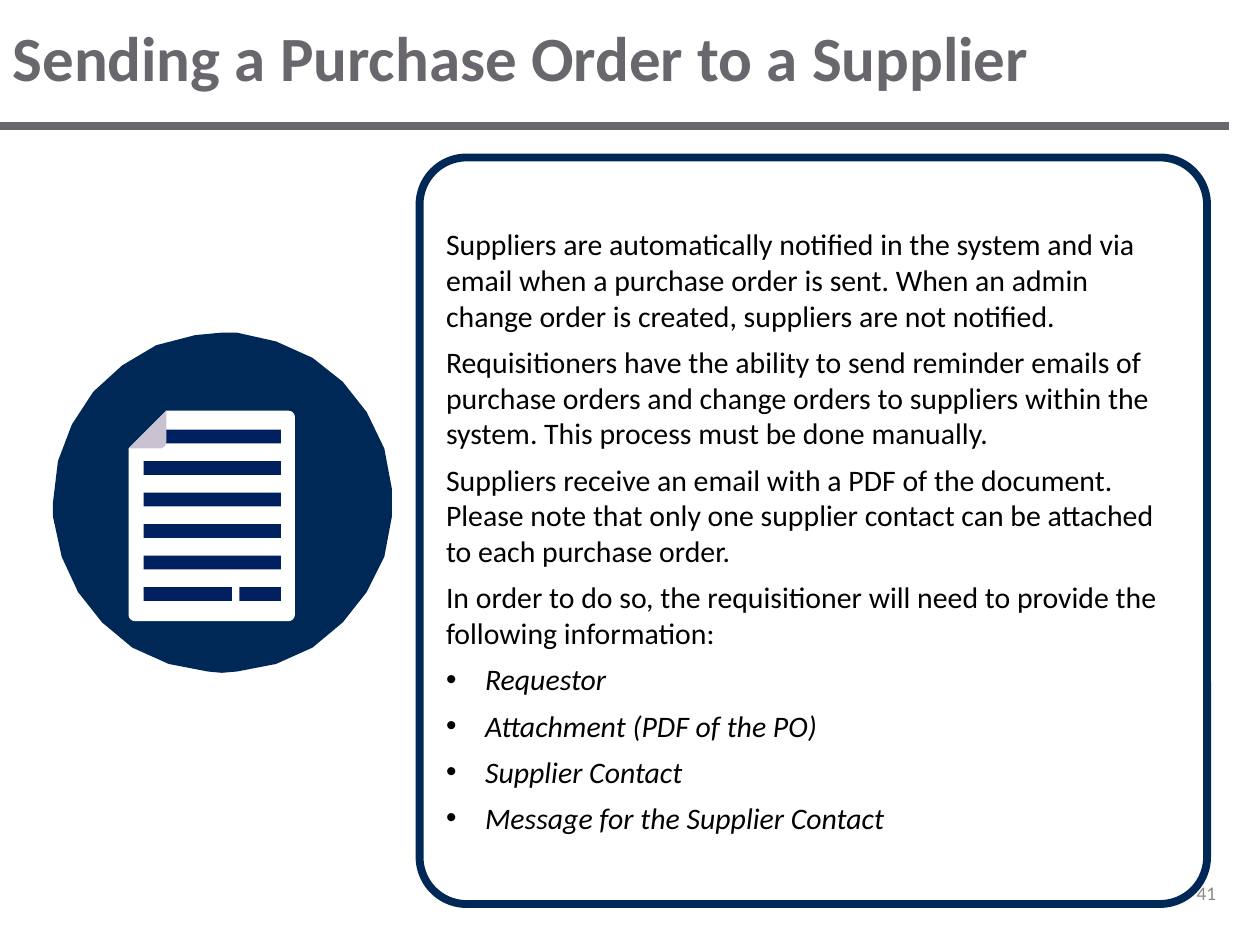
"""Build the slide on sending a purchase order to a supplier."""
from math import cos, pi, sin

from lxml.etree import SubElement
from pptx import Presentation
from pptx.dml.color import RGBColor
from pptx.enum.shapes import MSO_CONNECTOR as Connector, MSO_SHAPE as Shape
from pptx.enum.text import MSO_ANCHOR as Anchor, MSO_AUTO_SIZE as AutoSize, PP_ALIGN as Align
from pptx.oxml.ns import qn
from pptx.util import Inches, Pt

WIDTH, HEIGHT = Inches(10), Inches(7.5)
FONT = "Calibri"
GREY = RGBColor(0x69, 0x67, 0x6D)
NUMBER_GREY = RGBColor(0x88, 0x88, 0x88)
NAVY = RGBColor(0x00, 0x28, 0x57)
LINE_BLUE = RGBColor(0x00, 0x20, 0x60)
FOLD_LILAC = RGBColor(0xC9, 0xC2, 0xD1)
WHITE = RGBColor(0xFF, 0xFF, 0xFF)
BLACK = RGBColor(0x00, 0x00, 0x00)

PARAGRAPHS = [
    "Suppliers are automatically notified in the system and via email when a purchase order is sent. "
    "When an admin change order is created, suppliers are not notified.",
    "Requisitioners have the ability to send reminder emails of purchase orders and change orders "
    "to suppliers within the system. This process must be done manually.",
    "Suppliers receive an email with a PDF of the document. Please note that only one supplier "
    "contact can be attached to each purchase order.",
    "In order to do so, the requisitioner will need to provide the following information:",
]
BULLETS = ["Requestor", "Attachment (PDF of the PO)", "Supplier Contact", "Message for the Supplier Contact"]

DISC = [
    (1.76, 2.64), (1.55, 2.66), (1.24, 2.74), (0.97, 2.9), (0.74, 3.11), (0.57, 3.37), (0.46, 3.66),
    (0.42, 3.99), (0.42, 4.1), (0.49, 4.42), (0.62, 4.7), (0.81, 4.94), (1.05, 5.14), (1.34, 5.27),
    (1.65, 5.33), (1.76, 5.34), (1.88, 5.33), (2.19, 5.27), (2.48, 5.14), (2.72, 4.94), (2.91, 4.7),
    (3.05, 4.42), (3.11, 4.1), (3.11, 3.88), (3.05, 3.56), (2.91, 3.27), (2.72, 3.03), (2.48, 2.84),
    (2.19, 2.71), (1.88, 2.64),
]
SHEET_LEFT, SHEET_TOP, SHEET_RIGHT, SHEET_BOTTOM = 1.02, 3.26, 2.34, 4.93
FOLD, CORNER = 0.3, 0.05
ROW_TOP, ROW_STEP, ROW_HEIGHT = 3.41, 0.25, 0.11


def place(box, left, top, width, height):
    """Position a box by shares of the slide's size."""
    box.left, box.top = int(left * WIDTH), int(top * HEIGHT)
    box.width, box.height = int(width * WIDTH), int(height * HEIGHT)


def prepare_frame(box, side=0.1):
    """Set wrapping, middle anchoring and insets of a text frame."""
    frame = box.text_frame
    frame.word_wrap = True
    frame.auto_size = AutoSize.NONE
    frame.vertical_anchor = Anchor.MIDDLE
    frame.margin_left = frame.margin_right = Inches(side)
    frame.margin_top = frame.margin_bottom = Inches(0.05)
    return frame


def write(para, text, size, color, bold=False, italic=False, align=Align.LEFT):
    """Add one formatted run to a paragraph."""
    para.alignment = align
    span = para.add_run()
    span.text = text
    font = span.font
    font.name, font.size, font.bold, font.italic = FONT, Pt(size), bold, italic
    font.color.rgb = color


def set_bullet(para, bulleted):
    """Give a paragraph a hanging black bullet, or none."""
    props = para._p.get_or_add_pPr()
    indent = Inches(0.31) if bulleted else 0
    props.set("marL", str(indent))
    props.set("indent", str(-indent))
    if bulleted:
        SubElement(SubElement(props, qn("a:buClr")), qn("a:srgbClr")).set("val", str(BLACK))
        SubElement(props, qn("a:buFont")).set("typeface", "Arial")
        SubElement(props, qn("a:buChar")).set("char", "•")
    else:
        SubElement(props, qn("a:buNone"))


def paint(shape, color):
    """Fill a shape plainly, without line or shadow."""
    shape.shadow.inherit = False
    shape.fill.solid()
    shape.fill.fore_color.rgb = color
    shape.line.fill.background()


def add_outline(page, points, color):
    """Add a closed filled outline through points in inches."""
    corners = [(Inches(x), Inches(y)) for x, y in points]
    builder = page.shapes.build_freeform(*corners[0])
    builder.add_line_segments(corners[1:], close=True)
    paint(builder.convert_to_shape(), color)


def add_bar(page, left, top, width):
    """Add one text bar of the document icon."""
    bar = page.shapes.add_shape(
        Shape.RECTANGLE, Inches(left), Inches(top), Inches(width), Inches(ROW_HEIGHT))
    paint(bar, LINE_BLUE)


def arc(center_x, center_y, start):
    """Return points of a clockwise quarter-circle corner."""
    angles = [start + step * pi / 8 for step in range(5)]
    return [(center_x + CORNER * cos(angle), center_y + CORNER * sin(angle)) for angle in angles]


def add_document_icon(page):
    """Draw the folded document on its disc."""
    add_outline(page, DISC, NAVY)
    fold_x, fold_y = SHEET_LEFT + FOLD, SHEET_TOP + FOLD
    left, right = SHEET_LEFT + CORNER, SHEET_RIGHT - CORNER
    top, bottom = SHEET_TOP + CORNER, SHEET_BOTTOM - CORNER
    sheet = [(SHEET_LEFT, fold_y), (fold_x, SHEET_TOP)]
    sheet += arc(right, top, -pi / 2) + arc(right, bottom, 0) + arc(left, bottom, pi / 2)
    add_outline(page, sheet, WHITE)
    add_bar(page, 1.23, ROW_TOP, 1)
    for row in range(1, 5):
        add_bar(page, 1.14, ROW_TOP + row * ROW_STEP, 1.09)
    for left, width in ((1.14, 0.7), (1.9, 0.33)):
        add_bar(page, left, ROW_TOP + 5 * ROW_STEP, width)
    fold = [(SHEET_LEFT, fold_y), (fold_x, SHEET_TOP)] + arc(fold_x - CORNER, fold_y - CORNER, 0)
    add_outline(page, fold, FOLD_LILAC)


def add_title(page):
    """Fill the title and draw the rule below it."""
    rule_y = int(HEIGHT * 2 / 15)
    rule = page.shapes.add_connector(Connector.STRAIGHT, 0, rule_y, int(WIDTH * 0.975), rule_y)
    rule.line.color.rgb, rule.line.width = GREY, Pt(5)
    SubElement(rule._element.spPr, qn("a:effectLst"))
    title = page.shapes.title
    place(title, 0, 0, 1, 0.12)
    write(prepare_frame(title).paragraphs[0], "Sending a Purchase Order to a Supplier", 36, GREY, bold=True)


def add_page_number(page):
    """Add the page number at the lower right."""
    box = page.shapes.add_textbox(0, 0, 0, 0)
    place(box, 0.72, 0.92, 0.255, 0.05)
    write(prepare_frame(box).paragraphs[0], "41", 11, NUMBER_GREY, align=Align.RIGHT)


def add_panel(page):
    """Fill the body text and frame it with a rounded outline."""
    area = (0.333, 1 / 6, 0.625, 0.79)
    panel = page.shapes.add_shape(Shape.ROUNDED_RECTANGLE, 0, 0, 0, 0)
    place(panel, *area)
    panel.adjustments[0] = 0.063
    panel.shadow.inherit = False
    panel.fill.background()
    panel.line.color.rgb, panel.line.width = NAVY, Pt(4.5)
    body = page.placeholders[1]
    place(body, *area)
    frame = prepare_frame(body, side=0.21)
    for index, text in enumerate(PARAGRAPHS + BULLETS):
        para = frame.add_paragraph() if index else frame.paragraphs[0]
        para.space_before = Pt(6 if index else 0)
        bulleted = index >= len(PARAGRAPHS)
        set_bullet(para, bulleted)
        write(para, text, 17, BLACK, italic=bulleted)


def main():
    """Build and save the deck."""
    deck = Presentation()
    deck.slide_width, deck.slide_height = WIDTH, HEIGHT
    page = deck.slides.add_slide(deck.slide_layouts[1])
    add_title(page)
    add_page_number(page)
    add_panel(page)
    add_document_icon(page)
    deck.save("out.pptx")


if __name__ == "__main__":
    main()
